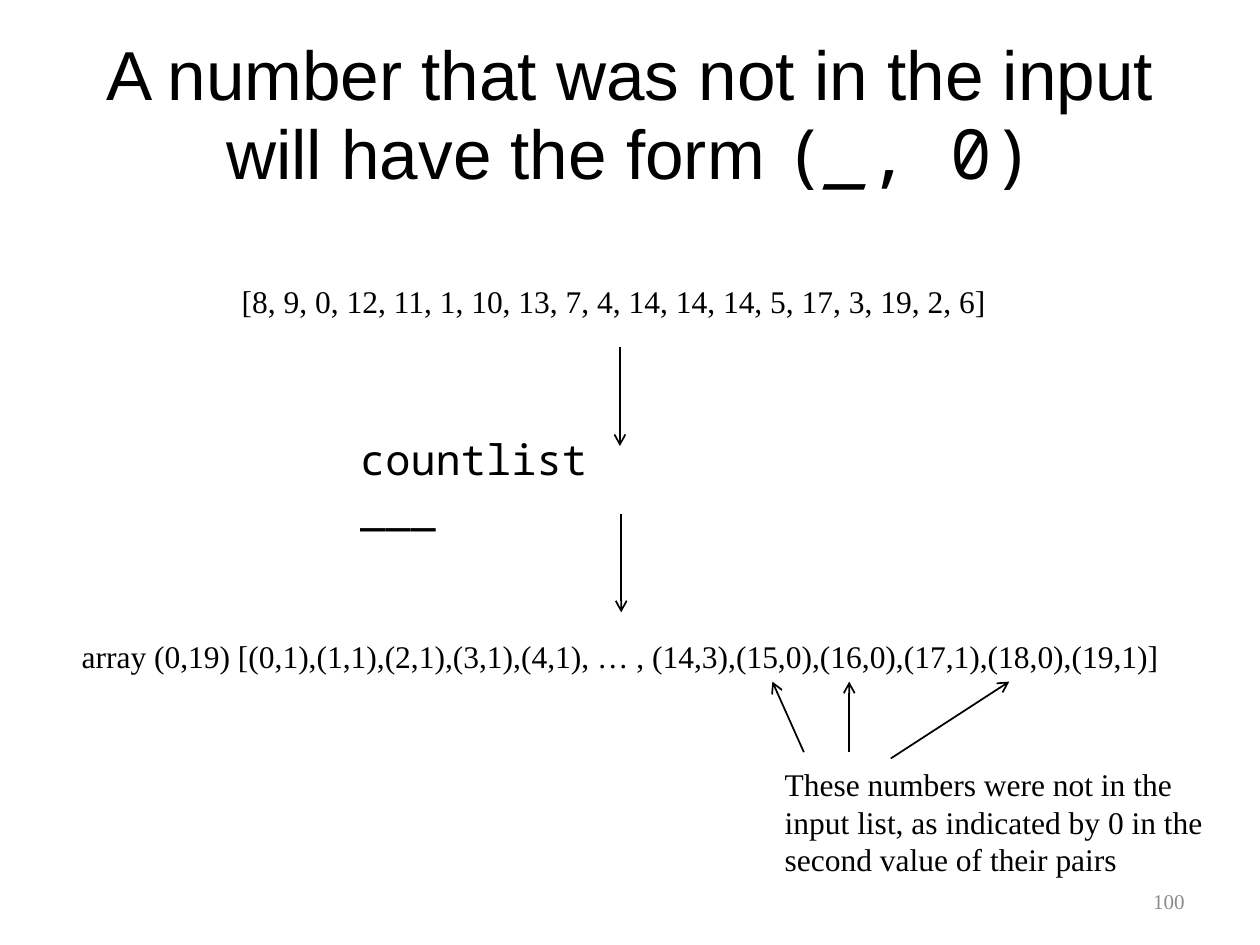
"""Build a slide showing how countlist marks numbers missing from its input."""
from typing import NamedTuple

import lxml.etree
import pptx
import pptx.dml.color
import pptx.enum.shapes
import pptx.enum.text
import pptx.oxml.ns
import pptx.util

BLACK = pptx.dml.color.RGBColor(0x00, 0x00, 0x00)
GRAY = pptx.dml.color.RGBColor(0x8C, 0x8C, 0x8C)
SANS, SERIF, MONO = "Arial", "Times New Roman", "Noto Sans Mono"
LEFT, CENTER, RIGHT = (
    pptx.enum.text.PP_ALIGN.LEFT,
    pptx.enum.text.PP_ALIGN.CENTER,
    pptx.enum.text.PP_ALIGN.RIGHT,
)
TOP, MIDDLE = pptx.enum.text.MSO_ANCHOR.TOP, pptx.enum.text.MSO_ANCHOR.MIDDLE
WIDTH, HEIGHT = pptx.util.Inches(10), pptx.util.Inches(7.5)
COLUMNS, ROWS = 10, 7.5
TITLE_SIZE = 39.6
FLOW_X = 4.92
TIP_Y, TAIL_Y = 5.41, 5.97


class Label(NamedTuple):
    """A text with its place on the grid and its look."""

    text: str
    left: float
    top: float
    width: float
    height: float
    size: float = 18
    font: str = SERIF
    color: pptx.dml.color.RGBColor = BLACK
    align: pptx.enum.text.PP_ALIGN = LEFT
    anchor: pptx.enum.text.MSO_ANCHOR = TOP
    wrap: bool = True


class Arrow(NamedTuple):
    """An arrow from its tail to its tip, in grid units."""

    tail_x: float
    tail_y: float
    tip_x: float
    tip_y: float


LABELS = [
    Label("[8, 9, 0, 12, 11, 1, 10, 13, 7, 4, 14, 14, 14, 5, 17, 3, 19, 2, 6]",
          1.82, 2.19, 6.17, 0.4, wrap=False),
    Label("countlist ___", 2.76, 3.39, 2.5, 0.5, 24, MONO),
    Label("array (0,19) [(0,1),(1,1),(2,1),(3,1),(4,1), … , "
          "(14,3),(15,0),(16,0),(17,1),(18,0),(19,1)]",
          0.55, 5.01, 8.77, 0.4),
    Label("These numbers were not in the input list, as indicated by 0 "
          "in the second value of their pairs", 6.13, 6.02, 3.6, 1.01),
    Label("100", 7.17, 6.95, 2.33, 0.4, 12, color=GRAY, align=RIGHT, anchor=MIDDLE),
]
ARROWS = [
    Arrow(FLOW_X, 2.75, FLOW_X, 3.54),
    Arrow(FLOW_X + 0.01, 4.08, FLOW_X + 0.01, 4.86),
    Arrow(6.38, TAIL_Y, 6.13, TIP_Y),
    Arrow(6.74, TAIL_Y, 6.74, TIP_Y),
    Arrow(7.07, 6.02, 8.01, TIP_Y),
]


def across(columns: float) -> int:
    """Turn grid columns into a length."""
    return round(WIDTH * columns / COLUMNS)


def down(rows: float) -> int:
    """Turn grid rows into a length."""
    return round(HEIGHT * rows / ROWS)


def add_text(para, text: str, size: float, font: str, color, italic: bool = False) -> None:
    """Append one formatted run to a paragraph."""
    run = para.add_run()
    run.text = text
    run.font.size = pptx.util.Pt(size)
    run.font.name = font
    run.font.italic = italic
    run.font.color.rgb = color


def add_label(page, label: Label) -> None:
    """Draw a text box."""
    box = page.shapes.add_textbox(across(label.left), down(label.top),
                                  across(label.width), down(label.height))
    frame = box.text_frame
    frame.word_wrap = label.wrap
    frame.vertical_anchor = label.anchor
    para = frame.paragraphs[0]
    para.alignment = label.align
    add_text(para, label.text, label.size, label.font, label.color)


def add_arrow(page, arrow: Arrow) -> None:
    """Draw a thin line with an open arrowhead at its tip."""
    line = page.shapes.add_connector(
        pptx.enum.shapes.MSO_CONNECTOR.STRAIGHT,
        across(arrow.tail_x), down(arrow.tail_y), across(arrow.tip_x), down(arrow.tip_y))
    line.line.color.rgb = BLACK
    line.line.width = pptx.util.Pt(1)
    outline = line.line._get_or_add_ln()
    lxml.etree.SubElement(outline, pptx.oxml.ns.qn("a:tailEnd"), type="arrow")
    lxml.etree.SubElement(line._element.spPr, pptx.oxml.ns.qn("a:effectLst"))


def fill_title(page) -> None:
    """Place and write the title."""
    title = page.shapes.title
    title.left, title.top = across(0.5), down(0.3)
    title.width, title.height = across(9), down(1.25)
    frame = title.text_frame
    frame.word_wrap = True
    frame.auto_size = pptx.enum.text.MSO_AUTO_SIZE.NONE
    frame.vertical_anchor = MIDDLE
    para = frame.paragraphs[0]
    para.alignment = CENTER
    para.line_spacing = 0.94
    add_text(para, "A number that was not in the input", TITLE_SIZE, SANS, BLACK)
    para.add_line_break()
    add_text(para, "will have the form ", TITLE_SIZE, SANS, BLACK)
    for text, italic in (("(", False), ("_", True), (", 0)", False)):
        add_text(para, text, TITLE_SIZE, MONO, BLACK, italic)


def main() -> None:
    """Build and save the deck."""
    deck = pptx.Presentation()
    deck.slide_width, deck.slide_height = WIDTH, HEIGHT
    page = deck.slides.add_slide(deck.slide_layouts.get_by_name("Title Only"))
    fill_title(page)
    for label in LABELS:
        add_label(page, label)
    for arrow in ARROWS:
        add_arrow(page, arrow)
    deck.save("out.pptx")


if __name__ == "__main__":
    main()
